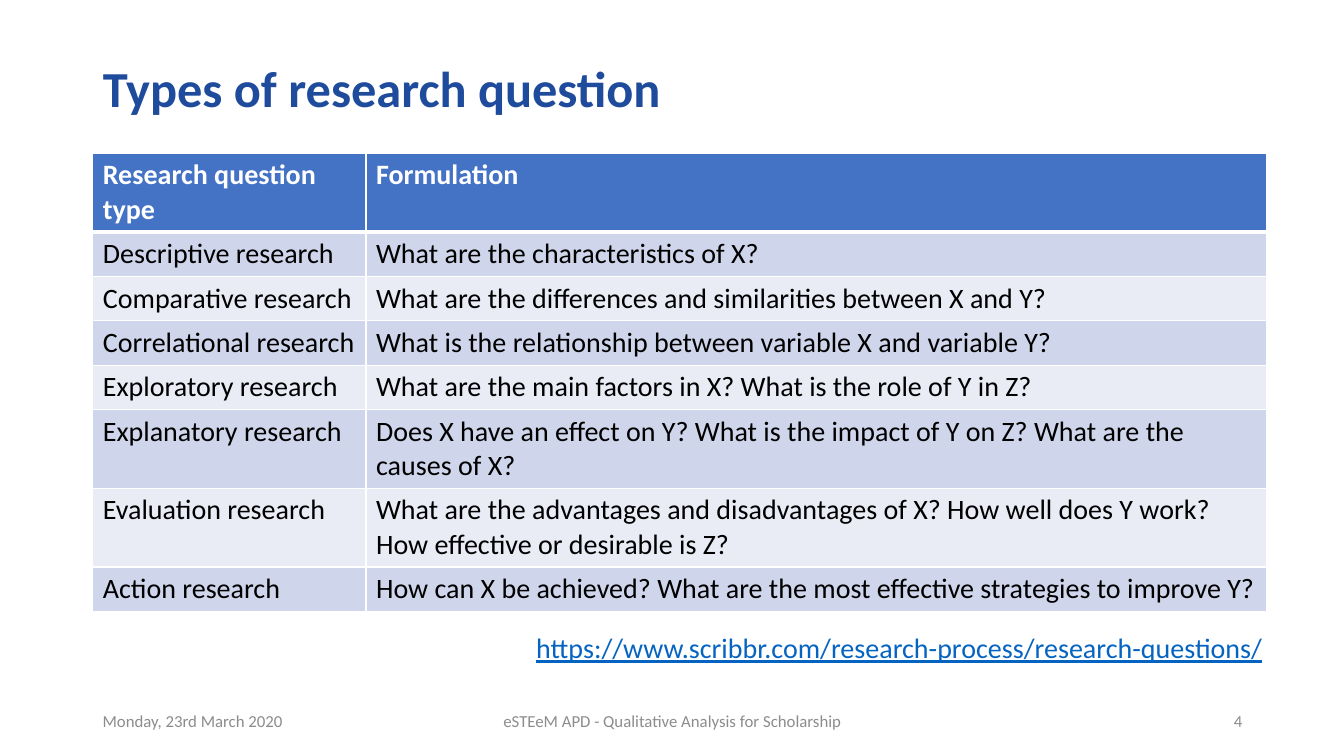
from lxml.etree import SubElement
from pptx import Presentation
from pptx.dml.color import RGBColor
from pptx.enum.text import MSO_ANCHOR as Anchor, MSO_AUTO_SIZE as AutoSize, PP_ALIGN as Align
from pptx.oxml.ns import qn
from pptx.util import Inches, Pt

COLORS = {
    "title": "1E4B9B", "header": "4472C4", "odd": "CFD5EA", "even": "E9EBF5",
    "white": "FFFFFF", "text": "000000", "footer": "8C8C8C", "link": "0563C1",
}
QUESTIONS = [
    ("Research question type", "Formulation"),
    ("Descriptive research", "What are the characteristics of X?"),
    ("Comparative research", "What are the differences and similarities between X and Y?"),
    ("Correlational research", "What is the relationship between variable X and variable Y?"),
    ("Exploratory research", "What are the main factors in X? What is the role of Y in Z?"),
    ("Explanatory research",
     "Does X have an effect on Y? What is the impact of Y on Z? What are the causes of X?"),
    ("Evaluation research",
     "What are the advantages and disadvantages of X? How well does Y work? "
     "How effective or desirable is Z?"),
    ("Action research",
     "How can X be achieved? What are the most effective strategies to improve Y?"),
]


def rgb(name):
    return RGBColor.from_string(COLORS[name])


def style(paragraph, size, color, bold=False, align=Align.LEFT):
    paragraph.alignment = align
    font = paragraph.font
    font.name, font.size, font.bold = "Calibri", Pt(size), bold
    font.color.rgb = rgb(color)


def set_borders(cell, top, bottom):
    """White cell borders; side borders are 1 pt."""
    properties = cell._tc.get_or_add_tcPr()
    for side, width in (("L", 1), ("R", 1), ("T", top), ("B", bottom)):
        line = SubElement(properties, qn(f"a:ln{side}"), w=str(Pt(width)))
        fill = SubElement(line, qn("a:solidFill"))
        SubElement(fill, qn("a:srgbClr"), val=COLORS["white"])


def add_title(slide, left, top, width, height):
    title = slide.shapes.title
    title.left, title.top = Inches(left), Inches(top)
    title.width, title.height = Inches(width), Inches(height)
    title.text_frame.text = "Types of research question"
    title.text_frame.vertical_anchor = Anchor.MIDDLE
    heading = title.text_frame.paragraphs[0]
    heading.line_spacing = 1.08
    style(heading, 36, "title", bold=True)


def add_question_table(slide, left, top, width, type_width, row_height):
    count = len(QUESTIONS)
    table = slide.shapes.add_table(
        count, 2, Inches(left), Inches(top), Inches(width), Inches(row_height * count)).table
    table.columns[0].width = Inches(type_width)
    table.columns[1].width = Inches(width - type_width)
    for row, texts in enumerate(QUESTIONS):
        header = row == 0
        band = "header" if header else "odd" if row % 2 else "even"
        for column, text in enumerate(texts):
            cell = table.cell(row, column)
            cell.text = text
            style(cell.text_frame.paragraphs[0], 20, "white" if header else "text", bold=header)
            set_borders(cell, top=3 if row == 1 else 1, bottom=3 if header else 1)
            cell.fill.solid()
            cell.fill.fore_color.rgb = rgb(band)


def add_label(slide, text, left, top, width, height, size, color, align=Align.LEFT):
    label = slide.shapes.add_textbox(Inches(left), Inches(top), Inches(width), Inches(height))
    frame = label.text_frame
    frame.text = text
    frame.word_wrap = True
    frame.vertical_anchor = Anchor.MIDDLE
    style(frame.paragraphs[0], size, color, align=align)
    return frame


def add_source(slide, left, top, width, height):
    source = add_label(slide, "https://www.scribbr.com/research-process/research-questions/",
                       left, top, width, height, 20, "link")
    source.word_wrap = False
    source.auto_size = AutoSize.SHAPE_TO_FIT_TEXT
    source.vertical_anchor = Anchor.TOP
    source.paragraphs[0].font.underline = True


def add_footer(slide, left, top, width, height):
    side, middle = 3, 4.5
    parts = [
        ("Monday, 23rd March 2020", left, side, Align.LEFT),
        ("eSTEeM APD - Qualitative Analysis for Scholarship",
         left + (width - middle) / 2, middle, Align.CENTER),
        ("4", left + width - side, side, Align.RIGHT),
    ]
    for text, part_left, part_width, align in parts:
        add_label(slide, text, part_left, top, part_width, height, 12, "footer", align)


def main():
    deck = Presentation()
    deck.slide_width, deck.slide_height = Inches(13.33), Inches(7.5)
    slide = deck.slides.add_slide(deck.slide_layouts[5])
    add_title(slide, 0.92, 0.4, 11.5, 0.89)
    add_question_table(slide, 0.92, 1.52, 11.64, type_width=2.71, row_height=0.41)
    add_footer(slide, 0.92, 6.95, 11.5, 0.4)
    add_source(slide, 5.22, 6.21, 7.49, 0.44)
    deck.save("out.pptx")


if __name__ == "__main__":
    main()
